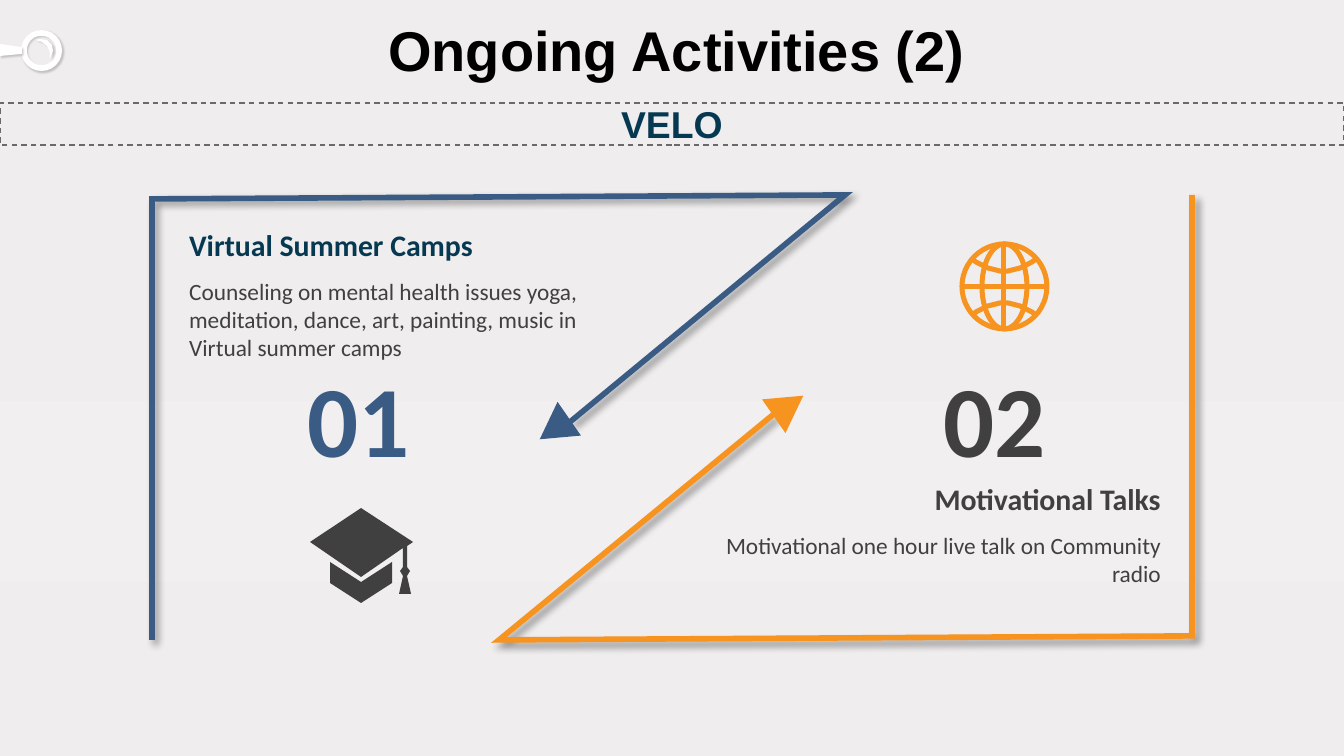
import pptx
import pptx.util
import pptx.dml.color
import pptx.enum.dml
import pptx.enum.shapes
import pptx.enum.text
import pptx.oxml
import pptx.oxml.ns

EMU = 914400 / 134.4
NAVY, BLUE, ORANGE, GREY = "063951", "3A5C84", "F7931F", "404040"
KIND = pptx.enum.shapes.MSO_SHAPE
ALIGN = pptx.enum.text.PP_ALIGN
ANCHOR = pptx.enum.text.MSO_ANCHOR
qn = pptx.oxml.ns.qn


def px(*nums):
    return [pptx.util.Emu(round(n * EMU)) for n in nums]


def rgb(code):
    return pptx.dml.color.RGBColor.from_string(code)


def node(tag, **attrs):
    item = pptx.oxml.parse_xml(f"<{tag} {pptx.oxml.ns.nsdecls('a')}/>")
    for key, val in attrs.items():
        item.set(key, str(val))
    return item


def paint(shape, fill=None, line=None, width=3):
    """Set fill and outline; None means no paint."""
    shape.shadow.inherit = False
    if fill:
        shape.fill.solid()
        shape.fill.fore_color.rgb = rgb(fill)
    else:
        shape.fill.background()
    if line:
        shape.line.color.rgb = rgb(line)
        shape.line.width = pptx.util.Pt(width)
    else:
        shape.line.fill.background()
    return shape


def shade(shape, color, blur, dist):
    """Add a soft shadow to the lower right."""
    cast = node("a:outerShdw", blurRad=pptx.util.Pt(blur), dist=pptx.util.Pt(dist),
                dir=2700000, algn="tl", rotWithShape=0)
    tint = node("a:srgbClr", val=color)
    tint.append(node("a:alpha", val=40000))
    cast.append(tint)
    shape.element.spPr.find(qn("a:effectLst")).append(cast)


def form(slide, box, kind, turn=0, **look):
    shape = slide.shapes.add_shape(kind, *px(*box))
    shape.rotation = turn
    return paint(shape, **look)


def trace(slide, *loops, close=True, **look):
    """Draw one outline from one or more lists of points."""
    pen = slide.shapes.build_freeform(*loops[0][0], scale=EMU)
    for i, loop in enumerate(loops):
        if i:
            pen.move_to(*loop[0])
        pen.add_line_segments(loop[1:], close=close)
    return paint(pen.convert_to_shape(), **look)


def rule(slide, ends, color, width):
    line = slide.shapes.add_connector(pptx.enum.shapes.MSO_CONNECTOR.STRAIGHT, *px(*ends))
    line.line.color.rgb = rgb(color)
    line.line.width = pptx.util.Pt(width)
    line.element.spPr.append(node("a:effectLst"))


def write(shape, text, size, color, bold=True, align=ALIGN.CENTER, font="Calibri"):
    frame = shape.text_frame
    frame.word_wrap = True
    para = frame.paragraphs[0]
    para.alignment = align
    run = para.add_run()
    run.text = text
    run.font.name = font
    run.font.size = pptx.util.Pt(size)
    run.font.bold = bold
    run.font.color.rgb = rgb(color)
    return frame


def label(slide, box, *args, **look):
    return write(slide.shapes.add_textbox(*px(*box)), *args, **look)


def backdrop(slide):
    fill = slide.background.fill
    fill.gradient()
    fill.gradient_angle = 270
    stops = slide.element.find(".//" + qn("a:gsLst"))
    for old in list(stops):
        stops.remove(old)
    for pos, code in (0, "EFEDEE"), (53, "F1EFF0"), (77, "EFEDEE"), (100, "EFEBEC"):
        stop = node("a:gs", pos=pos * 1000)
        stop.append(node("a:srgbClr", val=code))
        stops.append(stop)


def lens(slide):
    ring = form(slide, (21, 30, 41, 41), KIND.DONUT, fill="FFFFFF")
    ring.adjustments[0] = 0.14
    grip = [(0, 44), (22, 47), (22, 54), (0, 56)]
    gleam = [(35, 40), (40, 39), (47, 40), (52, 45), (53, 51), (50, 59),
             (50, 52), (47, 46), (42, 42)]
    for part in ring, trace(slide, grip, gleam, fill="FFFFFF"):
        shade(part, "808080", 1, 1)


def frame(slide, points, tip, turn, color):
    """Draw an open border that ends in a large arrowhead."""
    edge = trace(slide, points, close=False, line=color)
    edge.line._get_or_add_ln().append(node("a:miter", lim=800000))
    shade(edge, "000000", 4, 3)
    form(slide, (*tip, 41, 36), KIND.ISOSCELES_TRIANGLE, turn, fill=color)


def globe(slide):
    for left, wide in (962, 85), (982, 45):
        form(slide, (left, 244, wide, 85), KIND.OVAL, line=ORANGE, width=2.7)
    for ends in (1004, 244, 1004, 329), (962, 287, 1047, 287):
        rule(slide, ends, ORANGE, 2.7)
    for top, sag in (259, 12), (315, -12):
        arc = [(1004 + 4 * i, round(top + sag * (1 - (i / 8) ** 2), 2))
               for i in range(-8, 9)]
        trace(slide, arc, close=False, line=ORANGE, width=2.7)


def cap(slide):
    base = [(330, 562), (361, 582), (392, 562), (392, 583), (361, 603), (330, 583)]
    board = [(361, 508), (413, 542), (407, 546), (407, 567), (410, 571), (407, 576),
             (411, 594), (399, 594), (403, 576), (400, 571), (403, 567), (403, 548),
             (361, 577), (310, 542)]
    trace(slide, base, board, fill=GREY)


def main():
    deck = pptx.Presentation()
    deck.slide_width, deck.slide_height = px(1344, 756)
    slide = deck.slides.add_slide(deck.slide_layouts[6])
    backdrop(slide)
    lens(slide)

    title = label(slide, (93, 18, 1158, 82), "Ongoing Activities (2)", 30, "000000",
                  font="Arial")
    title.margin_left, title.margin_top, title.margin_right, title.margin_bottom = px(9, 5, 0, 5)
    title.paragraphs[0].line_spacing = 0.9
    band = form(slide, (0, 103, 1344, 42), KIND.RECTANGLE, line="6A6A6A", width=0.75)
    band.line.dash_style = pptx.enum.dml.MSO_LINE.DASH
    write(band, "VELO", 20, NAVY, font="Arial").vertical_anchor = ANCHOR.MIDDLE

    frame(slide, [(152, 640), (152, 199), (845, 195), (570, 422)], (534, 411), 235.2, BLUE)
    frame(slide, [(1192, 195), (1192, 636), (499, 640), (774, 414)], (768, 388), 55.2, ORANGE)

    for left, num, color in (277, "01", BLUE), (913, "02", GREY):
        text = label(slide, (left, 349, 164, 136), num, 54, color)
        text.vertical_anchor = ANCHOR.MIDDLE
    topics = [
        (176, 220, "Virtual Summer Camps", NAVY, ALIGN.LEFT,
         "Counseling on mental health issues yoga, meditation, dance, art, painting, "
         "music in Virtual summer camps"),
        (700, 474, "Motivational Talks", GREY, ALIGN.RIGHT,
         "Motivational one hour live talk on Community radio"),
    ]
    for left, top, head, color, align, body in topics:
        label(slide, (left, top, 474, 50), head, 16, color, align=align)
        label(slide, (left, top + 51, 474, 98), body, 12.5, GREY, bold=False, align=align)
    globe(slide)
    cap(slide)
    deck.save("out.pptx")


if __name__ == "__main__":
    main()
